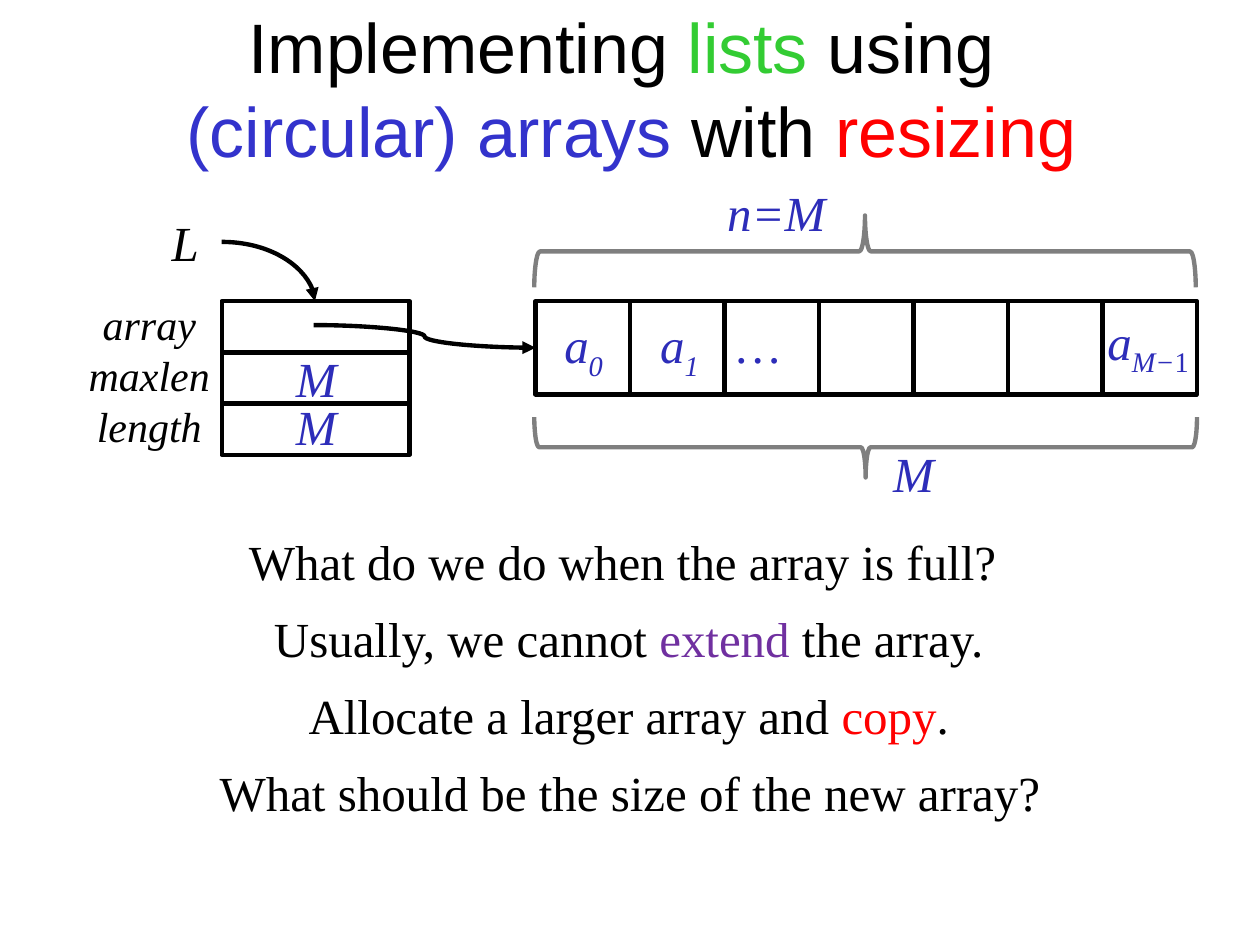
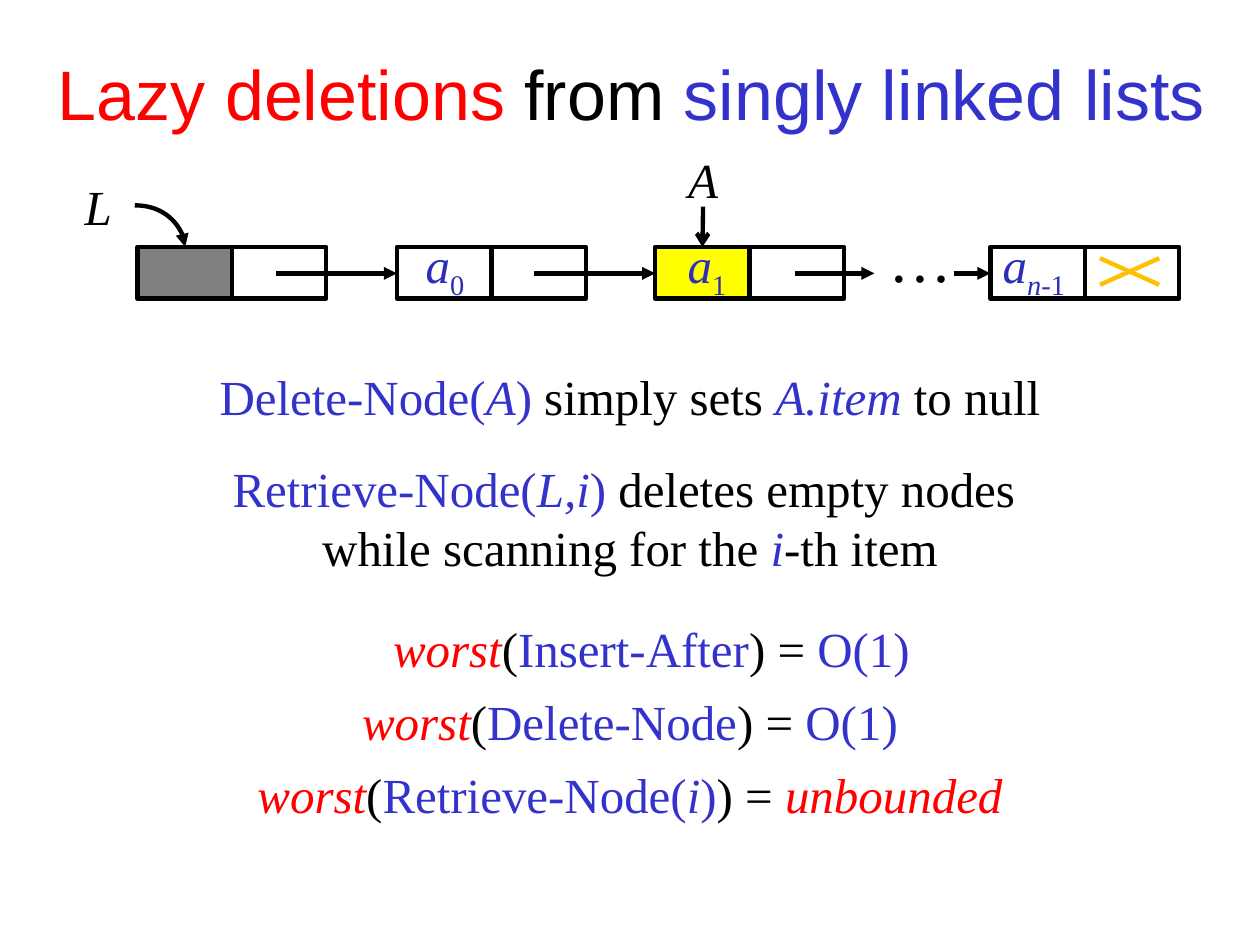
import dataclasses

import lxml.etree
import pptx
import pptx.dml.color
import pptx.enum.shapes
import pptx.enum.text
import pptx.oxml.ns
import pptx.util


@dataclasses.dataclass(frozen=True)
class Theme:
    black: str = "000000"
    blue: str = "3333CC"
    symbol: str = "2D2DB9"
    red: str = "FF0000"
    green: str = "33CC33"
    purple: str = "7030A0"
    yellow: str = "FFFF00"
    gray: str = "808080"
    orange: str = "FFC000"
    title_font: str = "Arial"
    body_font: str = "Times New Roman"
    title_size: int = 40
    dots_size: int = 36
    body_size: int = 28
    field_size: int = 24
    stroke: float = 2.5


theme = Theme()
RECT = pptx.enum.shapes.MSO_SHAPE.RECTANGLE
CURVE = pptx.enum.shapes.MSO_CONNECTOR.CURVE
STRAIGHT = pptx.enum.shapes.MSO_CONNECTOR.STRAIGHT
LEFT = pptx.enum.text.PP_ALIGN.LEFT
CENTER = pptx.enum.text.PP_ALIGN.CENTER


def write(slide, box, runs, size=theme.body_size, align=CENTER, title=False):
    area = slide.shapes.add_textbox(*map(pptx.util.Inches, box))
    frame = area.text_frame
    frame.word_wrap = True
    if title:
        frame.vertical_anchor = pptx.enum.text.MSO_ANCHOR.MIDDLE
    else:
        frame.auto_size = pptx.enum.text.MSO_AUTO_SIZE.SHAPE_TO_FIT_TEXT
    paragraph = frame.paragraphs[0]
    paragraph.alignment = align
    for words, color, *style in runs:
        if words == "\n":
            paragraph.add_line_break()
            continue
        run = paragraph.add_run()
        run.text = words
        run.font.name = theme.title_font if title else theme.body_font
        run.font.size = pptx.util.Pt(theme.title_size if title else size)
        run.font.color.rgb = pptx.dml.color.RGBColor.from_string(color)
        run.font.italic = "italic" in style
        if "sub" in style:
            run._r.get_or_add_rPr().set("baseline", "-25000")


def outline(item, color=theme.black, tail=None, alpha=None):
    item.line.color.rgb = pptx.dml.color.RGBColor.from_string(color)
    item.line.width = pptx.util.Pt(theme.stroke)
    properties = item._element.spPr
    line = properties.find(pptx.oxml.ns.qn("a:ln"))
    if tail:
        lxml.etree.SubElement(line, pptx.oxml.ns.qn("a:tailEnd")).set("type", tail)
    if alpha:
        stroke_color = line.find(".//" + pptx.oxml.ns.qn("a:srgbClr"))
        lxml.etree.SubElement(stroke_color, pptx.oxml.ns.qn("a:alpha")).set("val", str(alpha * 1000))
    lxml.etree.SubElement(properties, pptx.oxml.ns.qn("a:effectLst"))


deck = pptx.Presentation()
deck.slide_width = pptx.util.Inches(10)
deck.slide_height = pptx.util.Inches(7.5)
blank = deck.slide_layouts[6]

resizing = deck.slides.add_slide(blank)
write(resizing, (0.01, 0.07, 10, 1.25), [
    ("Implementing", theme.black), (" lists ", theme.green), ("using ", theme.black),
    ("\n", theme.black), ("(circular) arrays ", theme.blue),
    ("with ", theme.black), ("resizing", theme.red)], title=True)

record_fields = [(1.76, 2.39 + 0.405 * row, 1.49, 0.41) for row in range(3)]
array_cells = [(4.25 + 0.75 * column, 2.39, 0.75, 0.74) for column in range(7)]
for box in record_fields + array_cells:
    cell = resizing.shapes.add_shape(RECT, *map(pptx.util.Inches, box))
    cell.fill.background()
    outline(cell)

for row, field in enumerate(("array", "maxlen", "length")):
    write(resizing, (0.53, 2.32 + 0.405 * row, 1.31, 0.5),
          [(field, theme.black, "italic")], size=theme.field_size)

for box, label, color in [
    ((1.18, 1.64, 0.58, 0.57), "L", theme.black),
    ((2.05, 2.72, 0.92, 0.57), "M", theme.symbol),
    ((2.05, 3.1, 0.92, 0.57), "M", theme.symbol),
    ((6.79, 3.47, 0.92, 0.57), "M", theme.symbol),
    ((5.47, 1.4, 1.38, 0.57), "n=M", theme.symbol),
]:
    write(resizing, box, [(label, color, "italic")])

item = ("a", theme.symbol, "italic")
for box, runs in [
    ((4.38, 2.45, 0.59, 0.57), [item, ("0", theme.symbol, "italic", "sub")]),
    ((5.14, 2.45, 0.59, 0.57), [item, ("1", theme.symbol, "italic", "sub")]),
    ((5.75, 2.45, 0.59, 0.57), [("…", theme.symbol, "italic")]),
    ((8.69, 2.42, 0.92, 0.57), [item, ("M−", theme.symbol, "italic", "sub"),
                                ("1", theme.symbol, "sub")]),
]:
    write(resizing, box, runs, align=LEFT)

array_pointer = resizing.shapes.add_connector(
    CURVE, *map(pptx.util.Inches, (2.49, 2.58, 4.25, 2.76)))
outline(array_pointer, tail="triangle")

for box, rotation in [((6.63, 0.92, 0.48, 5.26), 90), ((6.58, -0.63, 0.57, 5.25), 270)]:
    brace = resizing.shapes.add_shape(
        pptx.enum.shapes.MSO_SHAPE.RIGHT_BRACE, *map(pptx.util.Inches, box))
    brace.rotation = rotation
    brace.adjustments[0] = 0.08
    brace.adjustments[1] = 0.5
    brace.fill.background()
    outline(brace, alpha=50)

for left, top, runs in [
    (-0.01, 4.17, [("What do we do when the array is full? ", theme.black)]),
    (-0.01, 4.78, [("Usually, we cannot ", theme.black), ("extend", theme.purple),
                   (" the array.", theme.black)]),
    (-0.01, 5.39, [("Allocate a larger array and ", theme.black), ("copy", theme.red),
                   (".", theme.black)]),
    (0, 6, [("What should be the size of the new array?", theme.black)]),
]:
    write(resizing, (left, top, 10, 0.57), runs)

deletions = deck.slides.add_slide(blank)
write(deletions, (0.01, 0.3, 10, 0.87), [
    ("Lazy deletions ", theme.red), ("from ", theme.black),
    ("singly linked lists", theme.blue)], title=True)

item_cells = []
for node_left, item_fill in [(1.09, theme.gray), (3.15, None), (5.2, theme.yellow), (7.86, None)]:
    for cell_left, fill in [(node_left, item_fill), (node_left + 0.75, None)]:
        cell = deletions.shapes.add_shape(
            RECT, *map(pptx.util.Inches, (cell_left, 1.96, 0.75, 0.41)))
        if fill:
            cell.fill.solid()
            cell.fill.fore_color.rgb = pptx.dml.color.RGBColor.from_string(fill)
        else:
            cell.fill.background()
        outline(cell)
        if cell_left == node_left:
            item_cells.append(cell)

for left, width, subscript in [
    (3.28, 0.59, [("0", theme.symbol, "sub")]),
    (5.36, 0.59, [("1", theme.symbol, "sub")]),
    (7.86, 0.92, [("n-", theme.symbol, "italic", "sub"), ("1", theme.symbol, "sub")]),
]:
    write(deletions, (left, 1.81, width, 0.57), [item] + subscript, align=LEFT)

for start, end in [(2.19, 3.15), (4.24, 5.2), (6.31, 6.94), (7.57, 7.86)]:
    next_pointer = deletions.shapes.add_connector(
        CURVE, *map(pptx.util.Inches, (start, 2.17, end, 2.17)))
    outline(next_pointer, tail="triangle")

for start_y, end_y in [(2.05, 2.26), (2.26, 2.05)]:
    null_stroke = deletions.shapes.add_connector(
        STRAIGHT, *map(pptx.util.Inches, (8.73, start_y, 9.2, end_y)))
    outline(null_stroke, theme.orange)

write(deletions, (0.49, 1.35, 0.58, 0.57), [("L", theme.black, "italic")])
write(deletions, (5.29, 1.14, 0.58, 0.57), [("A", theme.black, "italic")])
write(deletions, (6.66, 1.69, 1.31, 0.71), [("…", theme.black, "italic")], size=theme.dots_size)

node_pointer = deletions.shapes.add_connector(
    STRAIGHT, *map(pptx.util.Inches, (5.58, 1.64, 5.58, 1.96)))
node_pointer.end_connect(item_cells[2], 0)
outline(node_pointer, tail="arrow")

for slide, ends in [(resizing, (1.76, 1.92, 2.5, 2.39)), (deletions, (1.07, 1.63, 1.47, 1.96))]:
    list_pointer = slide.shapes.add_connector(CURVE, *map(pptx.util.Inches, ends))
    list_pointer._element.spPr.find(pptx.oxml.ns.qn("a:prstGeom")).set("prst", "curvedConnector2")
    outline(list_pointer, tail="triangle")

worst = [("worst", theme.red, "italic"), ("(", theme.black)]
constant = [(") =", theme.black), (" O(1)", theme.blue)]
for left, top, height, runs in [
    (0, 2.86, 0.57, [
        ("Delete-Node(", theme.blue), ("A", theme.blue, "italic"), (")", theme.blue),
        (" simply sets ", theme.black), ("A.item", theme.blue, "italic"),
        (" to null", theme.black)]),
    (0, 3.59, 1.04, [
        ("Retrieve-Node(", theme.blue), ("L,i", theme.blue, "italic"), (") ", theme.blue),
        ("deletes empty nodes ", theme.black), ("\n", theme.black),
        ("while scanning for the ", theme.black), ("i", theme.blue, "italic"),
        ("-th item", theme.black)]),
    (0.17, 4.86, 0.57, worst + [("Insert-After", theme.blue)] + constant),
    (0, 5.44, 0.57, worst + [("Delete-Node", theme.blue)] + constant),
    (0, 6.02, 0.57, worst + [
        ("Retrieve-Node(", theme.blue), ("i", theme.blue, "italic"), (")", theme.blue),
        (") = ", theme.black), ("unbounded", theme.red, "italic")]),
]:
    write(deletions, (left, top, 10, height), runs)

deck.save("out.pptx")
